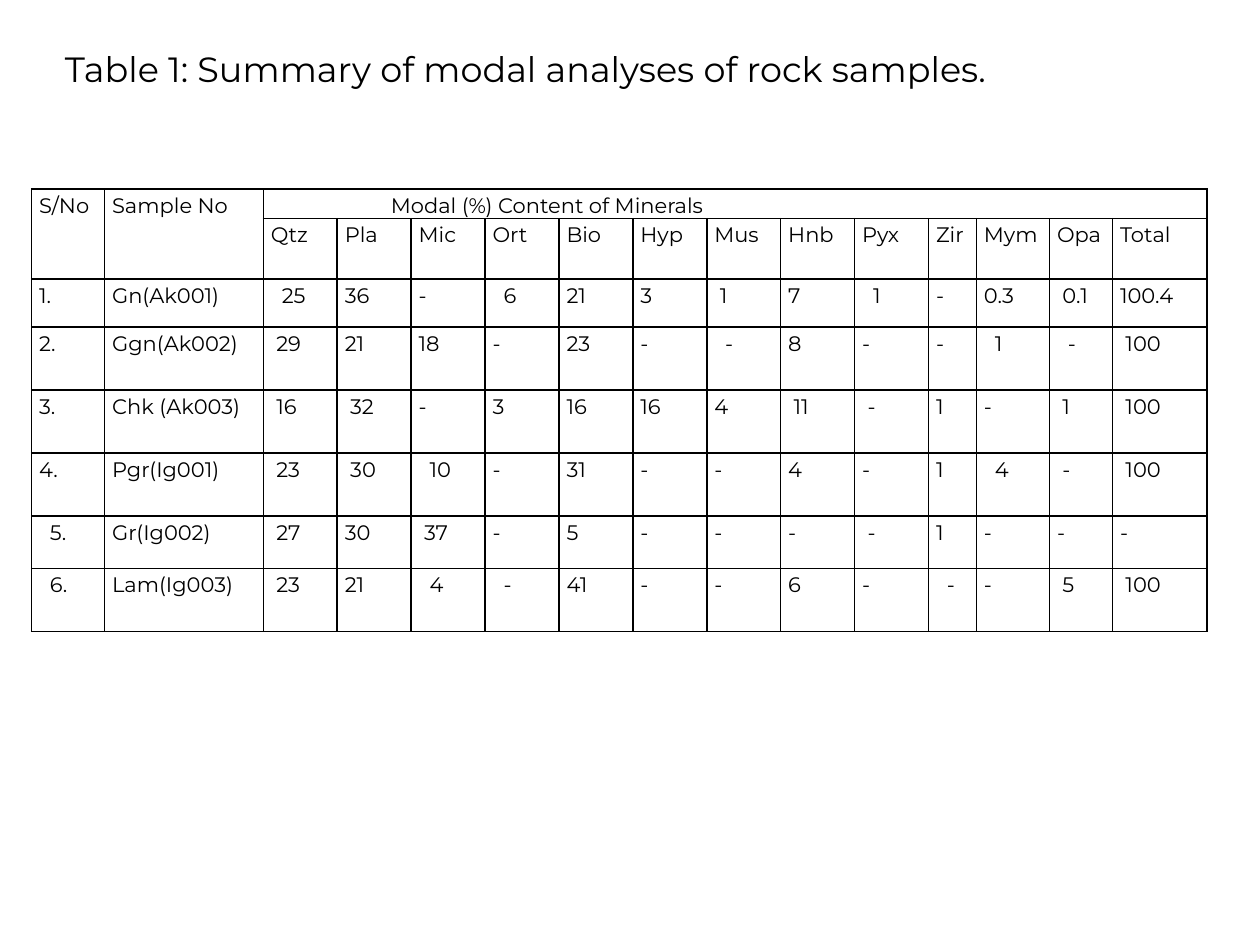
import dataclasses

import pptx
import pptx.dml.color
import pptx.enum.text
import pptx.oxml.ns
import pptx.util
from lxml import etree


@dataclasses.dataclass(frozen=True)
class Theme:
    font: str = "Montserrat"
    ink: str = "000000"
    title_size: float = 20
    table_size: float = 12
    rule_width: float = 1
    line_spacing: float = 1.15
    space_after: float = 10
    cell_inset: float = 0.06
    step: float = 0.26  # one indent step, as a share of the type size


THEME = Theme()
PAGE_WIDTH, PAGE_HEIGHT = 10, 7.5
TITLE = "Table 1: Summary of modal analyses of rock samples."
GROUP_HEADING, GROUP_STEPS = "Modal (%) Content of Minerals", 22

TABLE_LEFT, TABLE_TOP, TABLE_WIDTH = 0.25, 1.5, 9.33
LEAD_COLUMNS = [0.58, 1.26]
TAIL_COLUMNS = [0.38, 0.58, 0.5, 0.75]
EQUAL_COLUMNS = 9
ROW_HEIGHTS = [0.23, 0.48, 0.38, 0.5, 0.5, 0.5, 0.42, 0.5]

HEADINGS = ["S/No", "Sample No"]
MINERALS = "Qtz|Pla|Mic|Ort|Bio|Hyp|Mus|Hnb|Pyx|Zir|Mym|Opa|Total"
# Each space before a value stands for one indent step.
SAMPLES = [
    "1.|Gn(Ak001)|  25|36|-|  6|21|3| 1|7|  1|-|0.3| 0.1|100.4",
    "2.|Ggn(Ak002)| 29|21|18|-|23|-|  -|8|-|-|  1|  -| 100",
    "3.|Chk (Ak003)| 16| 32|-|3|16|16|4| 11| -|1|-| 1| 100",
    "4.|Pgr(Ig001)| 23| 30|  10|-|31|-|-|4|-|1|  4| -| 100",
    "  5.|Gr(Ig002)| 27|30| 37|-|5|-|-|-| -|1|-|-|-",
    "  6.|Lam(Ig003)| 23|21|  4|  -|41|-|-|6|-|  -|-| 5| 100",
]


def style_paragraph(para, size):
    para.font.name = THEME.font
    para.font.size = pptx.util.Pt(size)
    para.font.color.rgb = pptx.dml.color.RGBColor.from_string(THEME.ink)


def add_title(page):
    box = page.shapes.add_textbox(
        *map(pptx.util.Inches, (PAGE_WIDTH / 24, 0.33, PAGE_WIDTH * 0.92, 0.44)))
    frame = box.text_frame
    frame.word_wrap = True
    frame.auto_size = pptx.enum.text.MSO_AUTO_SIZE.SHAPE_TO_FIT_TEXT
    frame.text = TITLE
    style_paragraph(frame.paragraphs[0], THEME.title_size)


def rule_cell(cell):
    """Draw all four borders; they must come before the cell's fill."""
    properties = cell._tc.get_or_add_tcPr()
    qn = pptx.oxml.ns.qn
    for side in ("a:lnL", "a:lnR", "a:lnT", "a:lnB"):
        line = etree.SubElement(properties, qn(side),
                                w=str(pptx.util.Pt(THEME.rule_width)))
        fill = etree.SubElement(line, qn("a:solidFill"))
        etree.SubElement(fill, qn("a:srgbClr"), val=THEME.ink)


def format_cell(cell):
    rule_cell(cell)
    cell.fill.background()
    cell.margin_left = cell.margin_right = pptx.util.Inches(THEME.cell_inset)
    cell.margin_top = cell.margin_bottom = 0
    para = cell.text_frame.paragraphs[0]
    para.line_spacing = THEME.line_spacing
    para.space_after = pptx.util.Pt(THEME.space_after)
    style_paragraph(para, THEME.table_size)


def write_cell(cell, text, steps=0):
    para = cell.text_frame.paragraphs[0]
    para.text = text
    if steps:
        indent = pptx.util.Pt(steps * THEME.step * THEME.table_size)
        para._p.get_or_add_pPr().set("marL", str(indent))


def add_grid(page):
    equal = (TABLE_WIDTH - sum(LEAD_COLUMNS + TAIL_COLUMNS)) / EQUAL_COLUMNS
    widths = LEAD_COLUMNS + [equal] * EQUAL_COLUMNS + TAIL_COLUMNS
    bounds = (TABLE_LEFT, TABLE_TOP, TABLE_WIDTH, sum(ROW_HEIGHTS))
    table = page.shapes.add_table(
        len(ROW_HEIGHTS), len(widths), *map(pptx.util.Inches, bounds)).table
    table.first_row = table.horz_banding = False
    for column, width in zip(table.columns, widths):
        column.width = pptx.util.Inches(width)
    for row, height in zip(table.rows, ROW_HEIGHTS):
        row.height = pptx.util.Inches(height)
    for cell in table.iter_cells():
        format_cell(cell)
    return table


def fill_headings(table):
    first = len(HEADINGS)
    for column, heading in enumerate(HEADINGS):
        table.cell(0, column).merge(table.cell(1, column))
        write_cell(table.cell(0, column), heading)
    table.cell(0, first).merge(table.cell(0, len(table.columns) - 1))
    write_cell(table.cell(0, first), GROUP_HEADING, GROUP_STEPS)
    for column, mineral in enumerate(MINERALS.split("|"), first):
        write_cell(table.cell(1, column), mineral)


def fill_samples(table):
    for row, sample in enumerate(SAMPLES, 2):
        for column, entry in enumerate(sample.split("|")):
            text = entry.lstrip()
            write_cell(table.cell(row, column), text, len(entry) - len(text))


def main():
    deck = pptx.Presentation()
    deck.slide_width = pptx.util.Inches(PAGE_WIDTH)
    deck.slide_height = pptx.util.Inches(PAGE_HEIGHT)
    page = deck.slides.add_slide(deck.slide_layouts[6])
    table = add_grid(page)
    fill_headings(table)
    fill_samples(table)
    add_title(page)
    deck.save("out.pptx")


if __name__ == "__main__":
    main()
